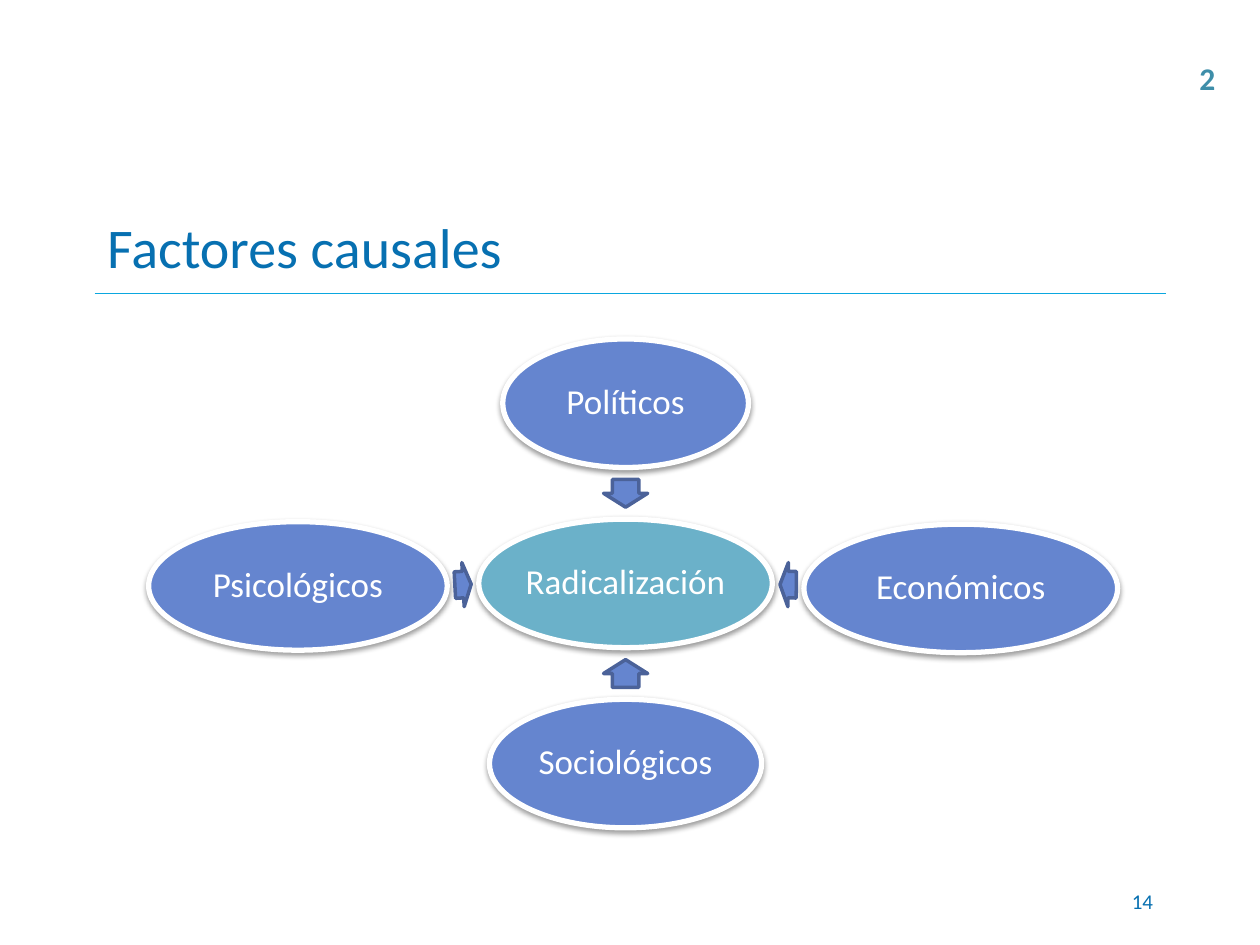
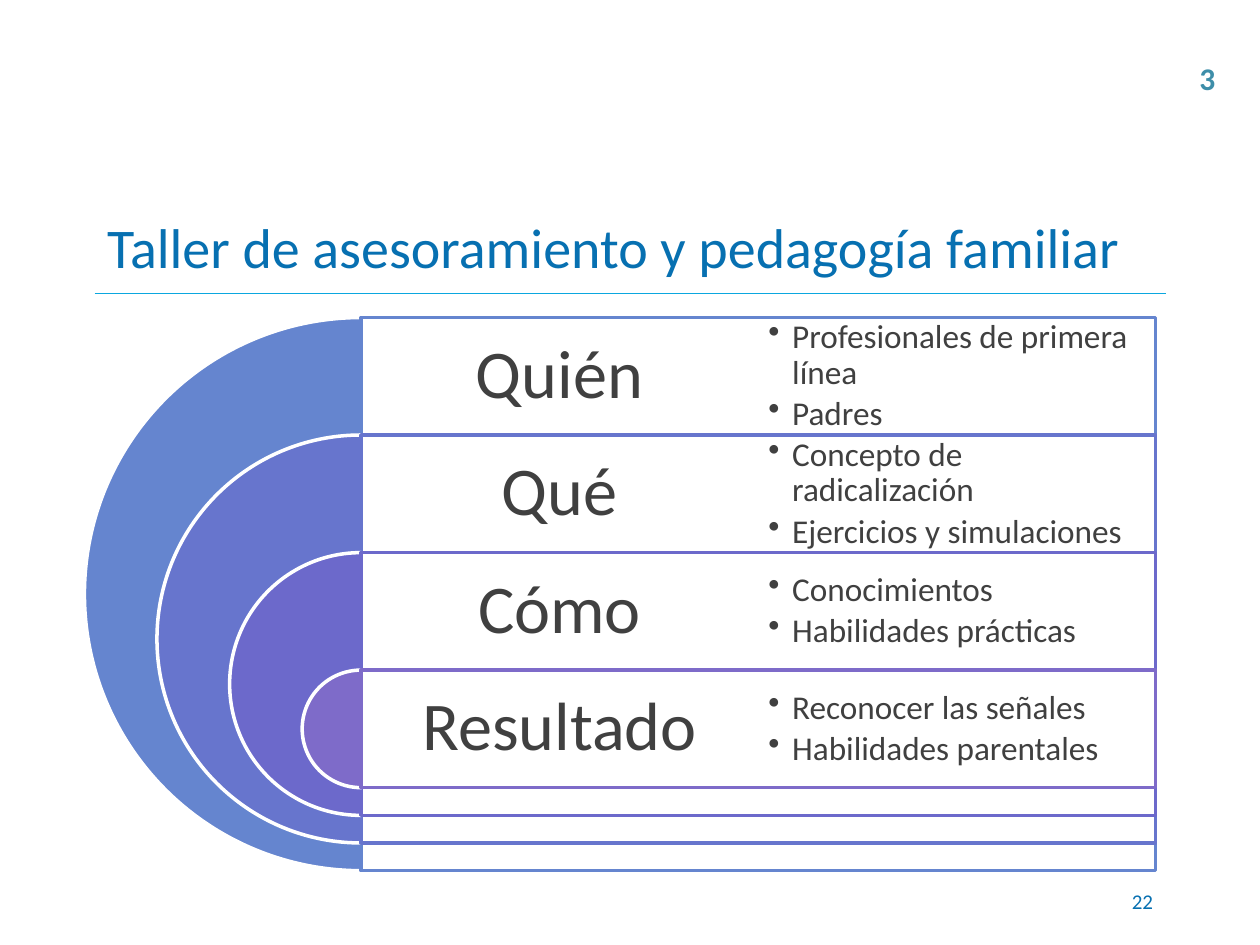
"""Build two slides: a diagram of causal factors and a nested workshop plan."""
from lxml import etree
from pptx import Presentation
from pptx.dml.color import RGBColor
from pptx.enum.shapes import MSO_CONNECTOR, MSO_SHAPE
from pptx.enum.text import MSO_ANCHOR, PP_ALIGN
from pptx.oxml.ns import qn
from pptx.util import Inches, Pt

OVAL, PIE = MSO_SHAPE.OVAL, MSO_SHAPE.PIE
RECT, ARROW = MSO_SHAPE.RECTANGLE, MSO_SHAPE.RIGHT_ARROW
LEFT, MID, RIGHT = PP_ALIGN.LEFT, PP_ALIGN.CENTER, PP_ALIGN.RIGHT
STRAIGHT, CENTER = MSO_CONNECTOR.STRAIGHT, MSO_ANCHOR.MIDDLE

FONT = "Calibri"
WIDE, HIGH = 10, 7.5
MARGIN = 0.075 * WIDE
SPAN = WIDE - 2 * MARGIN
RULE = 2.33
HUES = {
    "title": "0770B1", "rule": "0BA7DF", "count": "3E8EA9", "white": "FFFFFF",
    "text": "404040", "hub": "6BB1C9", "node": "6585CF", "edge": "4B6299",
}
RINGS = ["6585CF", "6775CD", "6C69CB", "7E6BC9"]

FACTORS = [
    ("Políticos", 1.95, 0, -1.43, 90),
    ("Económicos", 2.49, 2.66, 0.04, 180.7),
    ("Sociológicos", 2.16, 0, 1.43, 270),
    ("Psicológicos", 2.37, -2.6, 0.02, 356.9),
]
PLAN = [
    ("Quién", ["Profesionales de primera línea", "Padres"]),
    ("Qué", ["Concepto de radicalización", "Ejercicios y simulaciones"]),
    ("Cómo", ["Conocimientos", "Habilidades prácticas"]),
    ("Resultado", ["Reconocer las señales", "Habilidades parentales"]),
]


def rgb(name):
    """Turn a palette name or hex string into a colour."""
    return RGBColor.from_string(HUES.get(name, name))


def style(par, size, hue, align=LEFT, bold=False, line=None):
    """Format one paragraph."""
    par.alignment = align
    par.line_spacing = line
    font = par.font
    font.name, font.size, font.bold = FONT, Pt(size), bold
    font.color.rgb = rgb(hue)


def inset(frame, pad):
    """Centre a frame's text upright and give it equal margins."""
    frame.vertical_anchor = CENTER
    frame.margin_left = frame.margin_right = Inches(pad)
    frame.margin_top = frame.margin_bottom = Inches(pad)


def write(slide, box, lines, size, hue, pad=0.1, wrap=True, **look):
    """Add a text box and return its paragraphs' frame."""
    frame = slide.shapes.add_textbox(*map(Inches, box)).text_frame
    frame.word_wrap = wrap
    inset(frame, pad)
    frame.text = "\n".join(lines)
    for par in frame.paragraphs:
        style(par, size, hue, **look)
    return frame


def draw(slide, kind, box, fill, edge, width):
    """Add a filled and outlined shape."""
    shape = slide.shapes.add_shape(kind, *map(Inches, box))
    shape.shadow.inherit = False
    shape.fill.solid()
    shape.fill.fore_color.rgb = rgb(fill)
    shape.line.color.rgb = rgb(edge)
    shape.line.width = Pt(width)
    return shape


def fade(shape, share):
    """Make a shape's solid fill partly clear."""
    color = shape._element.spPr.find(qn("a:solidFill"))[0]
    etree.SubElement(color, qn("a:alpha"), val=str(share * 1000))


def shade(shape):
    """Cast a soft shadow straight down."""
    effects = shape._element.spPr.find(qn("a:effectLst"))
    cast = etree.SubElement(
        effects, qn("a:outerShdw"), blurRad=str(Pt(3.1)), dist=str(Pt(1.6)),
        dir="5400000", rotWithShape="0")
    color = etree.SubElement(cast, qn("a:srgbClr"), val="000000")
    etree.SubElement(color, qn("a:alpha"), val="38000")


def bullet(par, indent):
    """Give a paragraph a hanging bullet."""
    props = par._p.get_or_add_pPr()
    props.set("marL", str(Inches(indent)))
    props.set("indent", str(-Inches(indent)))
    etree.SubElement(props, qn("a:buChar"), char="•")


def start(deck, title, page, count):
    """Add a slide with its title, rule, page number and counter."""
    slide = deck.slides.add_slide(deck.slide_layouts[5])
    head = slide.shapes.title
    head.left, head.top = Inches(MARGIN), Inches(RULE - 0.75)
    head.width, head.height = Inches(SPAN), Inches(0.75)
    head.text_frame.text = title
    head.text_frame.vertical_anchor = CENTER
    style(head.text_frame.paragraphs[0], 32, "title")
    ends = (MARGIN, RULE, MARGIN + SPAN, RULE)
    rule = slide.shapes.add_connector(STRAIGHT, *map(Inches, ends))
    rule.line.color.rgb = rgb("rule")
    rule.line.width = Pt(0.75)
    etree.SubElement(rule._element.spPr, qn("a:effectLst"))
    write(slide, (7.17, 6.95, 2.08, 0.4), [page], 12, "title", align=RIGHT)
    write(slide, (9.42, 0.42, 0.33, 0.4), [count], 18, "count", wrap=False,
          bold=True)
    return slide


def node(slide, x, y, width, label, fill):
    """Draw a labelled oval around its centre."""
    tall = 1.02
    oval = draw(slide, OVAL, (x - width / 2, y - tall / 2, width, tall),
                fill, "white", 3)
    shade(oval)
    frame = oval.text_frame
    frame.word_wrap = False
    inset(frame, 0.03)
    frame.text = label
    style(frame.paragraphs[0], 20, "white", MID, line=0.9)


def radial(slide, box):
    """Draw the hub, its four factors and the arrows between them."""
    left, top, width, height = box
    x, y = left + width / 2, top + height / 2
    node(slide, x, y, 2.33, "Radicalización", "hub")
    for label, span, dx, dy, turn in FACTORS:
        node(slide, x + dx, y + dy, span, label, "node")
        deep = 0.13 if dx else 0.22
        ax = x + (1.29 if dx > 0 else -1.29 if dx else 0)
        ay = y + (0.01 if dx else dy / 2)
        arrow = draw(slide, ARROW, (ax - deep / 2, ay - 0.175, deep, 0.35),
                     "node", "edge", 2)
        arrow.adjustments[0] = 0.6
        arrow.rotation = turn


def nested(slide, box):
    """Draw half discs and panels, one inside the other, with their text."""
    left, top, width, height = box
    row = height * 0.2125
    step = (height - row) / (len(PLAN) - 1)
    mid = left + height / 2
    panel = left + width - mid
    half = panel / 2
    for i, ((name, items), hue) in enumerate(zip(PLAN, RINGS)):
        y, size = top + i * row, height - i * step
        disc = draw(slide, PIE, (mid - size / 2, y, size, size),
                    hue, "white", 2)
        disc.adjustments[0], disc.adjustments[1] = 54, 162
        fade(draw(slide, RECT, (mid, y, panel, size), "white", hue, 2), 90)
        write(slide, (mid, y, half, row), [name], 39, "text", pad=0.16,
              align=MID, line=0.9)
        frame = write(slide, (mid + half, y, half, row), items, 19, "text",
                      pad=0.08, line=0.9)
        for par in frame.paragraphs:
            par.space_after = Pt(3)
            bullet(par, 0.19)


def main():
    """Build and save the deck."""
    deck = Presentation()
    deck.slide_width, deck.slide_height = Inches(WIDE), Inches(HIGH)
    radial(start(deck, "Factores causales", "14", "2"),
           (1.18, 2.69, 7.57, 3.88))
    nested(start(deck, "Taller de asesoramiento y pedagogía familiar",
                 "22", "3"), (0.67, 2.52, SPAN, 4.39))
    deck.save("out.pptx")


if __name__ == "__main__":
    main()
